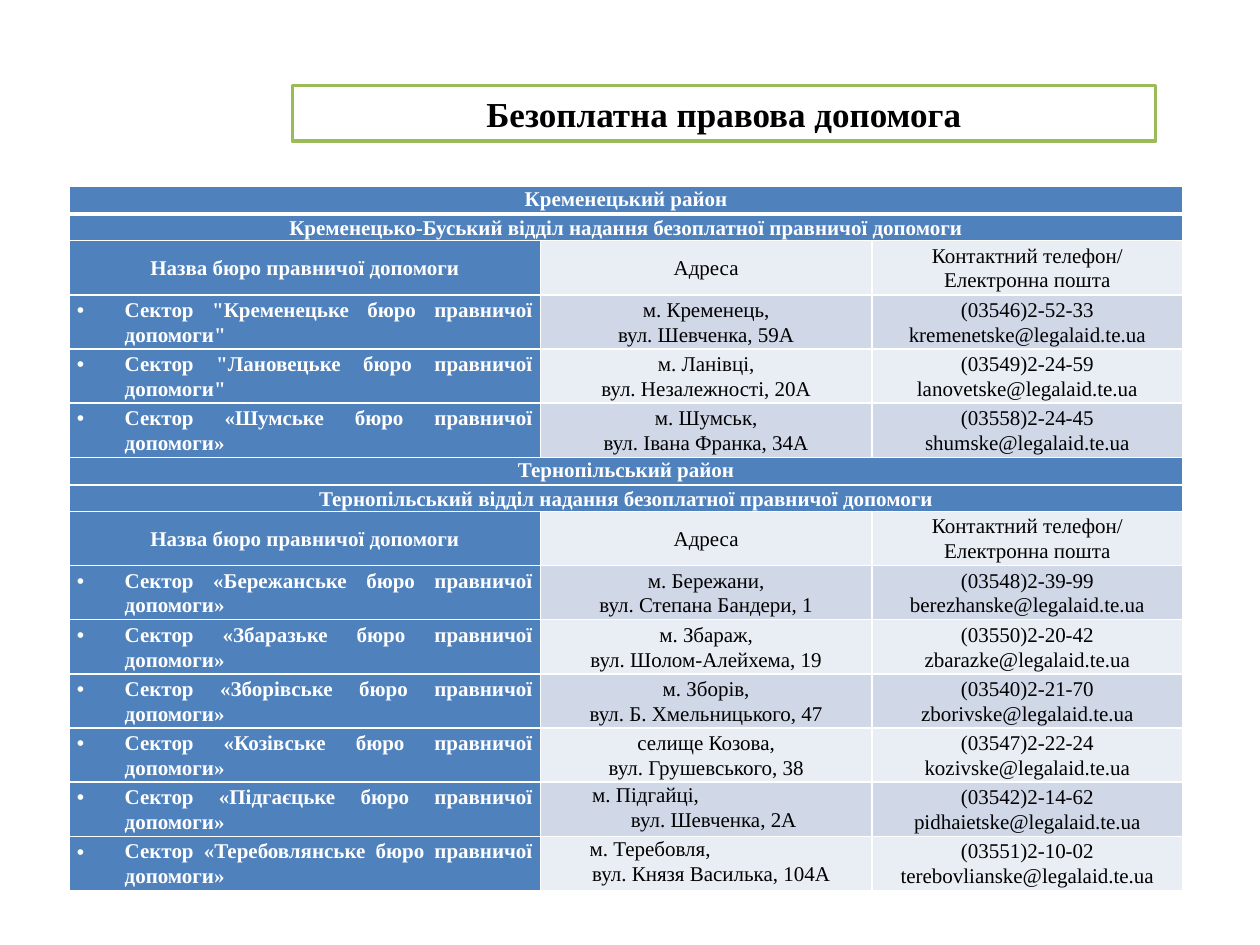
from lxml import etree
from pptx import Presentation
from pptx.dml.color import RGBColor
from pptx.enum import text as t
from pptx.oxml import ns
from pptx.util import Inches, Pt

WHITE = RGBColor(0xFF, 0xFF, 0xFF)
BLACK = RGBColor(0, 0, 0)
BLUE = RGBColor(0x4F, 0x81, 0xBD)
GREEN = RGBColor(0x9B, 0xBB, 0x59)
PALE = RGBColor(0xE9, 0xED, 0xF4)
MID = RGBColor(0xD0, 0xD8, 0xE8)
FACE = "Times New Roman"
MAIL = "@legalaid.te.ua"

TITLE = "Безоплатна правова допомога"
HEADS = ("Назва бюро правничої допомоги", "Адреса",
         "Контактний телефон/\nЕлектронна пошта")
AREAS = [
    ("Кременецький район", "Кременецько-Буський", [
        ('"Кременецьке {}"', "м. Кременець,", "вул. Шевченка, 59А",
         "(03546)2-52-33", "kremenetske"),
        ('"Лановецьке {}"', "м. Ланівці,", "вул. Незалежності, 20А",
         "(03549)2-24-59", "lanovetske"),
        ("«Шумське {}»", "м. Шумськ,", "вул. Івана Франка, 34А",
         "(03558)2-24-45", "shumske"),
    ]),
    ("Тернопільський район", "Тернопільський", [
        ("«Бережанське {}»", "м. Бережани,", "вул. Степана Бандери, 1",
         "(03548)2-39-99", "berezhanske"),
        ("«Збаразьке {}»", "м. Збараж,", "вул. Шолом-Алейхема, 19",
         "(03550)2-20-42", "zbarazke"),
        ("«Зборівське {}»", "м. Зборів,", "вул. Б. Хмельницького, 47",
         "(03540)2-21-70", "zborivske"),
        ("«Козівське {}»", "селище Козова,", "вул. Грушевського, 38",
         "(03547)2-22-24", "kozivske"),
        ("«Підгаєцьке {}»", "м. Підгайці,", "вул. Шевченка, 2А",
         "(03542)2-14-62", "pidhaietske"),
        ("«Теребовлянське {}»", "м. Теребовля,", "вул. Князя Василька, 104А",
         "(03551)2-10-02", "terebovlianske"),
    ]),
]
SHIFTS = {"м. Підгайці,": (0.35, 0.12), "м. Теребовля,": (0.33, 0.08)}
COLS = (3.74, 2.63, 2.47)
TALL = 0.43
CELL = {"margin_left": Inches(0.06), "margin_right": Inches(0.06),
        "margin_top": 0, "margin_bottom": 0}


def style(run, size, bold, color):
    font = {"name": FACE, "size": Pt(size), "bold": bold}
    for key, val in font.items():
        setattr(run.font, key, val)
    run.font.color.rgb = color


def edge(cell, side, width):
    props = cell._tc.get_or_add_tcPr()
    line = etree.SubElement(props, ns.qn("a:ln" + side), w=str(Pt(width)))
    fill = etree.SubElement(line, ns.qn("a:solidFill"))
    etree.SubElement(fill, ns.qn("a:srgbClr"), val=str(WHITE))


def paint(cell, color, top=1, base=1):
    for side, width in (("L", 1), ("R", 1), ("T", top), ("B", base)):
        edge(cell, side, width)
    cell.fill.solid()
    cell.fill.fore_color.rgb = color


def write(cell, words, bold, anchor=t.MSO_ANCHOR.MIDDLE):
    for key, val in CELL.items():
        setattr(cell, key, val)
    cell.vertical_anchor = anchor
    cell.text = words
    for para in cell.text_frame.paragraphs:
        para.alignment = t.PP_ALIGN.CENTER
        para.line_spacing = 1.07
        style(para.runs[0], 12, bold, WHITE if bold else BLACK)


def bullet(para):
    para.alignment = t.PP_ALIGN.JUSTIFY
    props = para._p.get_or_add_pPr()
    props.set("marL", str(Inches(0.38)))
    props.set("indent", str(-Inches(0.38)))
    etree.SubElement(props, ns.qn("a:buFont"), typeface="Arial")
    etree.SubElement(props, ns.qn("a:buChar"), char="•")


def shift(cell, gaps):
    cell.vertical_anchor = t.MSO_ANCHOR.TOP
    paras = cell.text_frame.paragraphs
    paras[0].alignment = t.PP_ALIGN.LEFT
    for para, gap in zip(paras, gaps):
        para._p.get_or_add_pPr().set("marL", str(Inches(gap)))


def add_title(slide):
    box = slide.shapes.title
    place = {"left": 2.32, "top": 0.68, "width": 6.85, "height": 0.44}
    for key, val in place.items():
        setattr(box, key, Inches(val))
    box.fill.solid()
    box.fill.fore_color.rgb = WHITE
    box.line.color.rgb = GREEN
    box.line.width = Pt(2)
    frame = box.text_frame
    frame.text = TITLE
    frame.word_wrap = True
    frame.auto_size = t.MSO_AUTO_SIZE.NONE
    frame.vertical_anchor = t.MSO_ANCHOR.MIDDLE
    para = frame.paragraphs[0]
    para.alignment = t.PP_ALIGN.CENTER
    style(para.runs[0], 20, True, BLACK)


def list_rows():
    rows = []
    for area, dept, desks in AREAS:
        rows.append((0.22, (area,)))
        rows.append((0.21, (f"{dept} відділ надання безоплатної правничої допомоги",)))
        rows.append((TALL, HEADS))
        for name, town, road, phone, mail in desks:
            desk = "Сектор " + name.format("бюро правничої допомоги")
            rows.append((TALL, (desk, f"{town}\n{road}", f"{phone}\n{mail}{MAIL}")))
    return rows


def add_grid(slide):
    rows = list_rows()
    high = sum(row[0] for row in rows)
    grid = slide.shapes.add_table(len(rows), len(COLS), Inches(0.55), Inches(1.48),
                                  Inches(sum(COLS)), Inches(high)).table
    for col, wide in zip(grid.columns, COLS):
        col.width = Inches(wide)
    for i, (tall, words) in enumerate(rows):
        grid.rows[i].height = Inches(tall)
        band = len(words) == 1
        for j in range(len(COLS)):
            tint = BLUE if band or j == 0 else (MID if i % 2 else PALE)
            paint(grid.cell(i, j), tint, 3 if i == 1 else 1, 3 if i == 0 else 1)
        if band:
            grid.cell(i, 0).merge(grid.cell(i, len(COLS) - 1))
        for j, word in enumerate(words):
            first = band and tall == 0.22
            write(grid.cell(i, j), word, j == 0,
                  t.MSO_ANCHOR.TOP if first else t.MSO_ANCHOR.MIDDLE)
        if not band and words != HEADS:
            bullet(grid.cell(i, 0).text_frame.paragraphs[0])
            town = words[1].split("\n")[0]
            if town in SHIFTS:
                shift(grid.cell(i, 1), SHIFTS[town])


def main():
    deck = Presentation()
    deck.slide_width, deck.slide_height = Inches(10), Inches(7.5)
    slide = deck.slides.add_slide(deck.slide_layouts[5])
    add_title(slide)
    add_grid(slide)
    deck.save("out.pptx")


if __name__ == "__main__":
    main()
